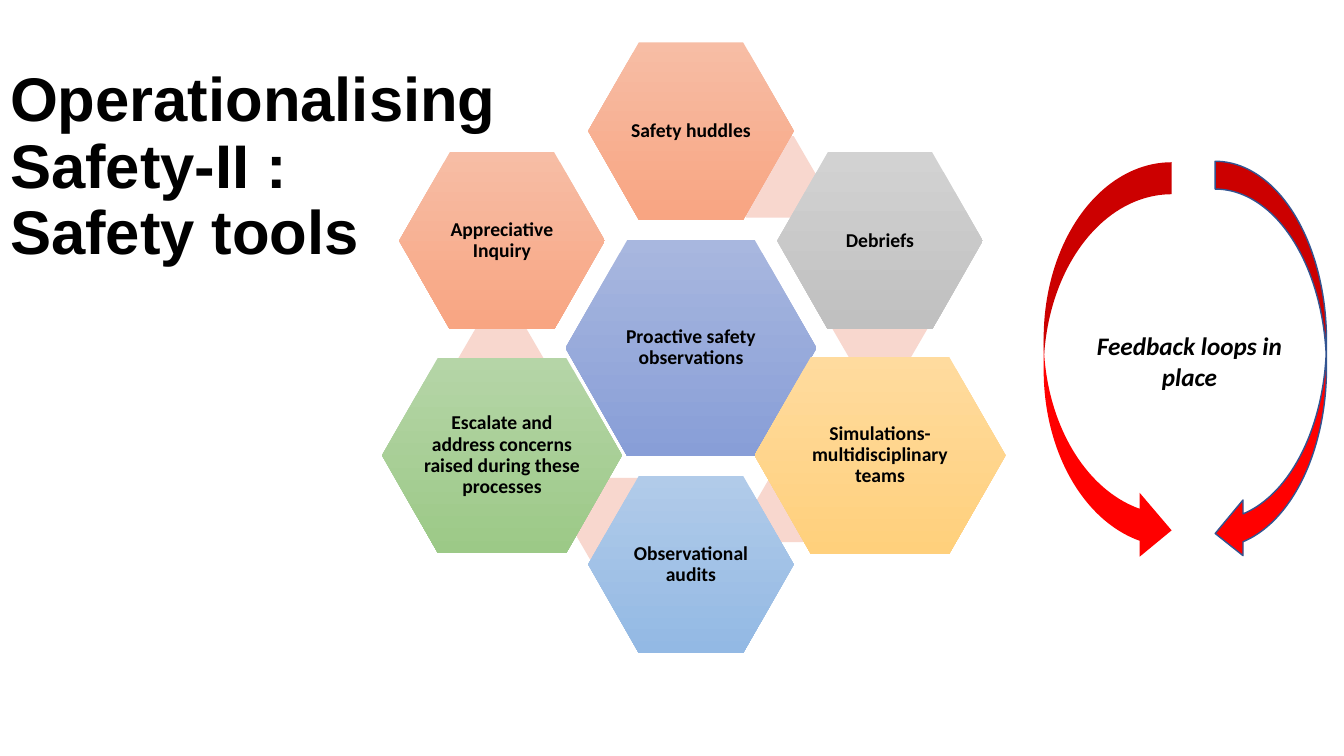
from lxml import etree
from pptx import Presentation
from pptx.dml.color import RGBColor
from pptx.enum import shapes, text
from pptx.util import Pt

KIND = shapes.MSO_SHAPE
HUES = {
    "blue": ("A8B7DF", "889ED7"),
    "coral": ("F7BDA5", "F8A582"),
    "grey": ("D2D2D2", "C0C0C0"),
    "gold": ("FFDB9E", "FFD07C"),
    "sky": ("B1CBE9", "93B9E4"),
    "green": ("B5D5A7", "9CC987"),
}
COLORS = {"text": "000000", "link": "F8D7CE", "arrow": "FF0000", "edge": "325491"}
COLS = (358.6, 493.6, 628.6)
ROWS = (93.6, 172, 248.6, 325.3, 403.2)
SMALL, CORE = (146.9, 126.7), (179.3, 154.8)
LINK = (67.7, 58.3)

# label, hue, column, row, size, top left of the link behind it
TOOLS = [
    ("Proactive safety observations", "blue", 1, 2, CORE, None),
    ("Safety huddles", "coral", 1, 0, SMALL, (516.2, 97.2)),
    ("Debriefs", "grey", 2, 1, SMALL, (594.7, 205.9)),
    ("Simulations- multidisciplinary teams", "gold", 2, 3, (179.3, 140.4), (540, 329)),
    ("Observational audits", "sky", 1, 4, SMALL, (404.6, 341.3)),
    ("Escalate and address concerns raised during these processes",
     "green", 0, 3, (171.4, 139), (324, 232.6)),
    ("Appreciative Inquiry", "coral", 0, 1, SMALL, None),
]


def rgb(code):
    return RGBColor.from_string(code)


def style(para, font, size, italic=False):
    face = para.font
    face.name, face.size, face.bold, face.italic = font, Pt(size), True, italic
    face.color.rgb = rgb(COLORS["text"])


def add_form(slide, kind, box, fill=None):
    form = slide.shapes.add_shape(kind, *map(Pt, box))
    form.shadow.inherit = False
    form.line.fill.background()
    if fill:
        form.fill.solid()
        form.fill.fore_color.rgb = rgb(fill)
    return form


def add_link(slide, spot):
    link = add_form(slide, KIND.HEXAGON, (*spot, *LINK), COLORS["link"])
    link.adjustments[0] = 0.29


def add_tool(slide, label, hue, col, row, size):
    """Hexagon with a vertical gradient, centred on its column and row."""
    wide, high = size
    box = (COLS[col] - wide / 2, ROWS[row] - high / 2, wide, high)
    cell = add_form(slide, KIND.HEXAGON, box)
    cell.adjustments[0] = 0.286
    cell.fill.gradient()
    cell.fill.gradient_angle = 270
    for stop, code in zip(cell.fill.gradient_stops, HUES[hue]):
        stop.color.rgb = rgb(code)
    frame = cell.text_frame
    frame.margin_left = frame.margin_right = Pt(1.4)
    frame.margin_top = frame.margin_bottom = Pt(1.4)
    frame.vertical_anchor = text.MSO_ANCHOR.MIDDLE
    frame.text = label
    para = frame.paragraphs[0]
    para.alignment = text.PP_ALIGN.CENTER
    para.line_spacing = 0.9
    style(para, "Calibri", 14)


def set_title(slide, words):
    title = slide.shapes.title
    title.left, title.top, title.width, title.height = map(Pt, (0, 0, 368.6, 240.5))
    frame = title.text_frame
    frame.text = words
    frame.word_wrap = True
    frame.auto_size = text.MSO_AUTO_SIZE.NONE
    frame.vertical_anchor = text.MSO_ANCHOR.MIDDLE
    para = frame.paragraphs[0]
    para.alignment = text.PP_ALIGN.LEFT
    para.line_spacing = 0.9
    style(para, "Arial", 44)


def add_loop(slide):
    left = add_form(slide, KIND.CURVED_LEFT_ARROW, (868, 115.2, 79.5, 285.8), COLORS["arrow"])
    left.line.color.rgb = rgb(COLORS["edge"])
    left.line.width = Pt(1)
    add_form(slide, KIND.CURVED_RIGHT_ARROW, (745.5, 115.9, 91.4, 285.8), COLORS["arrow"])
    note = slide.shapes.add_textbox(*map(Pt, (776.2, 232.6, 146.9, 51.1)))
    frame = note.text_frame
    frame.word_wrap = True
    frame.text = "Feedback loops in place"
    para = frame.paragraphs[0]
    para.alignment = text.PP_ALIGN.CENTER
    style(para, "Calibri", 18, italic=True)


def main():
    deck = Presentation()
    deck.slide_width, deck.slide_height = Pt(960), Pt(540)
    slide = deck.slides.add_slide(deck.slide_layouts[5])
    set_title(slide, "Operationalising Safety-II :\vSafety tools")
    for *tool, spot in TOOLS:
        if spot:
            add_link(slide, spot)
        add_tool(slide, *tool)
    add_loop(slide)
    deck.save("out.pptx")


if __name__ == "__main__":
    main()
